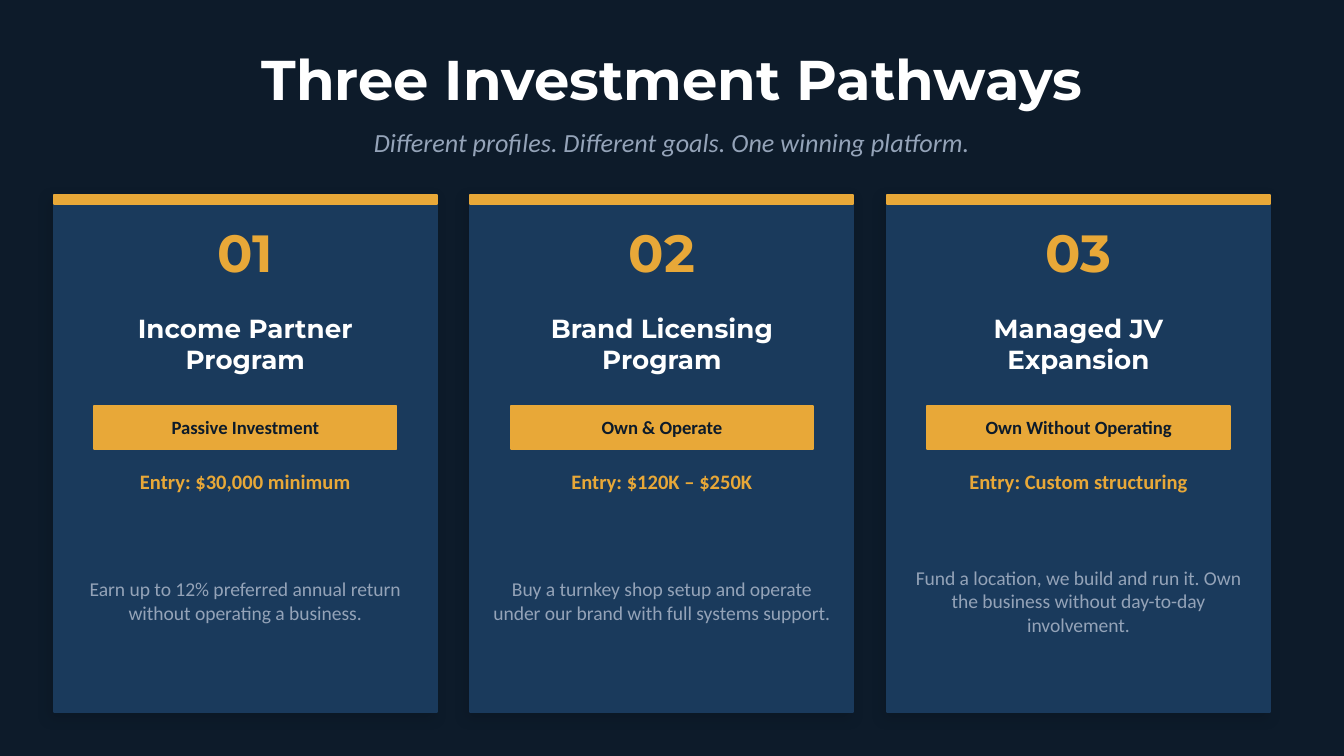
import pptx
import pptx.dml.color
import pptx.enum.shapes
import pptx.enum.text
import pptx.oxml
import pptx.oxml.ns
import pptx.util

COLORS = {
    "night": "0D1B2A",
    "navy": "1A3A5C",
    "gold": "E8A838",
    "slate": "94A3B8",
    "white": "FFFFFF",
    "black": "000000",
}

PATHWAYS = [
    ("01", "Income Partner\nProgram", "Passive Investment", "Entry: $30,000 minimum",
     "Earn up to 12% preferred annual return without operating a business."),
    ("02", "Brand Licensing\nProgram", "Own & Operate", "Entry: $120K – $250K",
     "Buy a turnkey shop setup and operate under our brand with full systems support."),
    ("03", "Managed JV\nExpansion", "Own Without Operating", "Entry: Custom structuring",
     "Fund a location, we build and run it. Own the business without day-to-day involvement."),
]


def rgb(name):
    return pptx.dml.color.RGBColor.from_string(COLORS[name])


def points(*lengths):
    return [pptx.util.Pt(length) for length in lengths]


def write(shape, text, size, color, font="Calibri", bold=False, italic=False):
    frame = shape.text_frame
    frame.word_wrap = True
    frame.margin_left = frame.margin_right = frame.margin_top = frame.margin_bottom = 0
    frame.vertical_anchor = pptx.enum.text.MSO_ANCHOR.MIDDLE
    frame.text = text
    for paragraph in frame.paragraphs:
        paragraph.alignment = pptx.enum.text.PP_ALIGN.CENTER
        for run in paragraph.runs:
            run.font.name = font
            run.font.size = pptx.util.Pt(size)
            run.font.bold = bold
            run.font.italic = italic
            run.font.color.rgb = rgb(color)


def add_text(slide, box, text, size, color, **style):
    write(slide.shapes.add_textbox(*points(*box)), text, size, color, **style)


def add_panel(slide, box, color):
    panel = slide.shapes.add_shape(pptx.enum.shapes.MSO_SHAPE.RECTANGLE, *points(*box))
    panel.shadow.inherit = False
    panel.fill.solid()
    panel.fill.fore_color.rgb = rgb(color)
    panel.line.color.rgb = rgb(color)
    panel.line.width = pptx.util.Pt(1)
    return panel


def add_soft_shadow(panel, blur, distance, angle, opacity):
    effects = panel._element.spPr.find(pptx.oxml.ns.qn("a:effectLst"))
    effects.append(pptx.oxml.parse_xml(
        f'<a:outerShdw {pptx.oxml.ns.nsdecls("a")} blurRad="{pptx.util.Pt(blur)}" '
        f'dist="{pptx.util.Pt(distance)}" dir="{angle * 60000}" algn="bl" rotWithShape="0">'
        f'<a:srgbClr val="{COLORS["black"]}"><a:alpha val="{opacity * 1000}"/></a:srgbClr>'
        f'</a:outerShdw>'))


def add_heading(slide, left, top, width):
    add_text(slide, (left, top, width, 43.2), "Three Investment Pathways", 30, "white",
             font="Montserrat", bold=True)
    add_text(slide, (left, top + 44.64, width, 23.04),
             "Different profiles. Different goals. One winning platform.", 14, "slate", italic=True)


def add_pathway_card(slide, left, top, width, height, pathway):
    number, name, role, entry, summary = pathway
    card = add_panel(slide, (left, top, width, height), "navy")
    add_soft_shadow(card, blur=7, distance=3, angle=135, opacity=12)
    add_panel(slide, (left, top, width, 5.04), "gold")
    add_text(slide, (left, top + 10.8, width, 39.6), number, 28, "gold",
             font="Montserrat", bold=True)
    add_text(slide, (left, top + 52.56, width, 54), name, 14, "white",
             font="Montserrat", bold=True)
    badge = add_panel(slide, (left + 21.6, top + 113.04, width - 43.2, 23.04), "gold")
    write(badge, role, 10, "night", bold=True)
    add_text(slide, (left, top + 143.28, width, 20.16), entry, 11, "gold", bold=True)
    add_text(slide, (left + 10.8, top + 170.64, width - 21.6, 93.6), summary, 10.5, "slate")


def main():
    deck = pptx.Presentation()
    deck.slide_width, deck.slide_height = points(720, 405)
    slide = deck.slides.add_slide(deck.slide_layouts[6])
    slide.background.fill.solid()
    slide.background.fill.fore_color.rgb = rgb("night")

    add_heading(slide, 36, 20.16, 648)
    card_width, gap = 205.2, 18
    for index, pathway in enumerate(PATHWAYS):
        left = 28.8 + index * (card_width + gap)
        add_pathway_card(slide, left, 104.4, card_width, 277.2, pathway)

    deck.save("out.pptx")


if __name__ == "__main__":
    main()
